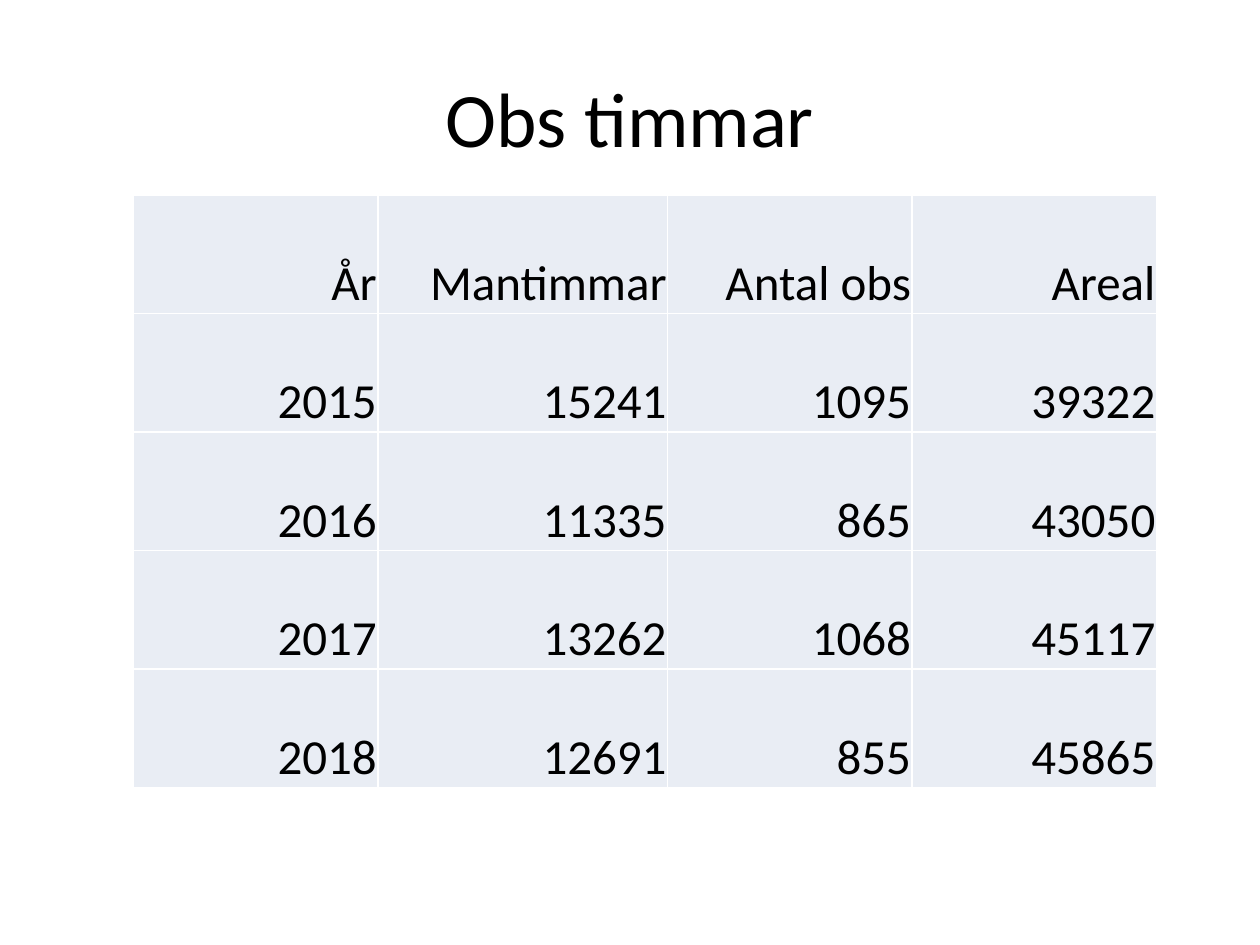
"""Build a slide with a table of observation hours per year."""
from lxml import etree
from pptx import Presentation
from pptx.dml.color import RGBColor
from pptx.enum.text import MSO_ANCHOR, PP_ALIGN
from pptx.oxml.ns import qn
from pptx.util import Inches, Pt

MIDDLE, BOTTOM = MSO_ANCHOR.MIDDLE, MSO_ANCHOR.BOTTOM
CENTER, RIGHT = PP_ALIGN.CENTER, PP_ALIGN.RIGHT

BLACK = RGBColor(0x00, 0x00, 0x00)
WHITE = RGBColor(0xFF, 0xFF, 0xFF)
PALE_BLUE = RGBColor(0xE9, 0xED, 0xF4)
FONT = "Calibri"
TITLE_ONLY = 5

COLUMN_WIDTHS = (1.94, 2.3, 1.94, 1.94)
ROW_HEIGHT = 0.94
OBSERVATIONS = (
    ("År", "Mantimmar", "Antal obs", "Areal"),
    (2015, 15241, 1095, 39322),
    (2016, 11335, 865, 43050),
    (2017, 13262, 1068, 45117),
    (2018, 12691, 855, 45865),
)


def format_paragraph(paragraph, size, alignment):
    paragraph.alignment = alignment
    font = paragraph.font
    font.name = FONT
    font.size = Pt(size)
    font.bold = False
    font.color.rgb = BLACK


def add_title(slide, text):
    title = slide.shapes.title
    title.left, title.top = Inches(0.5), Inches(0.3)
    title.width, title.height = Inches(9), Inches(1.25)
    title.text_frame.text = text
    title.text_frame.vertical_anchor = MIDDLE
    format_paragraph(title.text_frame.paragraphs[0], 44, CENTER)


def add_borders(cell):
    properties = cell._tc.get_or_add_tcPr()
    for side in ("a:lnL", "a:lnR", "a:lnT", "a:lnB"):
        border = etree.SubElement(properties, qn(side), w=str(Pt(1)))
        fill = etree.SubElement(border, qn("a:solidFill"))
        etree.SubElement(fill, qn("a:srgbClr"), val=str(WHITE))


def fill_cell(cell, value):
    cell.text = str(value)
    cell.vertical_anchor = BOTTOM
    cell.margin_left = cell.margin_right = cell.margin_top = Inches(0.01)
    cell.margin_bottom = 0
    format_paragraph(cell.text_frame.paragraphs[0], 28, RIGHT)
    add_borders(cell)
    cell.fill.solid()
    cell.fill.fore_color.rgb = PALE_BLUE


def add_observation_table(slide):
    table = slide.shapes.add_table(
        len(OBSERVATIONS), len(COLUMN_WIDTHS), Inches(1.06), Inches(1.55),
        Inches(sum(COLUMN_WIDTHS)), Inches(ROW_HEIGHT * len(OBSERVATIONS)),
    ).table
    table.first_row = table.horz_banding = False
    for column, width in zip(table.columns, COLUMN_WIDTHS):
        column.width = Inches(width)
    for row, values in zip(table.rows, OBSERVATIONS):
        row.height = Inches(ROW_HEIGHT)
        for cell, value in zip(row.cells, values):
            fill_cell(cell, value)


def main():
    presentation = Presentation()
    presentation.slide_width = Inches(10)
    presentation.slide_height = Inches(7.5)
    slide = presentation.slides.add_slide(presentation.slide_layouts[TITLE_ONLY])
    add_title(slide, "Obs timmar")
    add_observation_table(slide)
    presentation.save("out.pptx")


if __name__ == "__main__":
    main()
